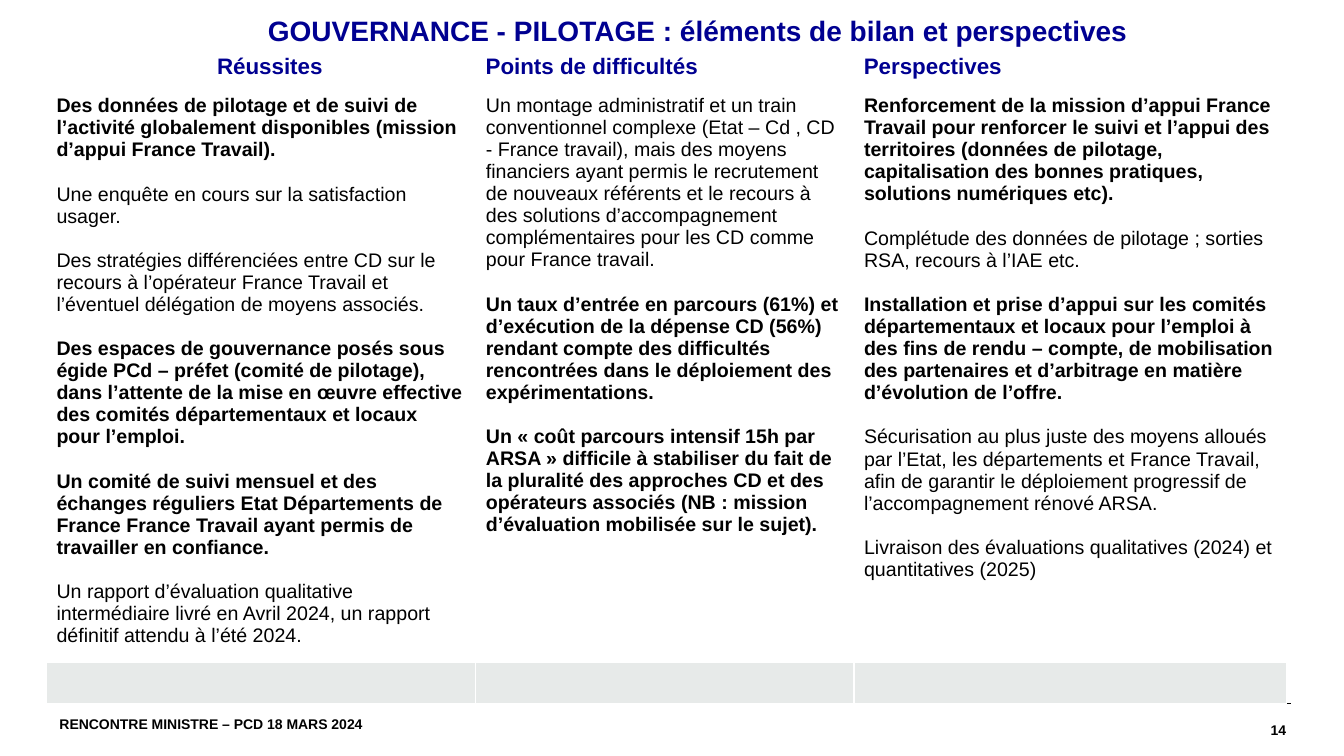
from dataclasses import dataclass

from lxml import etree
from pptx import Presentation
from pptx.dml.color import RGBColor
from pptx.enum.shapes import MSO_CONNECTOR
from pptx.enum.text import MSO_ANCHOR, PP_ALIGN
from pptx.oxml.ns import qn
from pptx.util import Cm, Pt

LEFT, RIGHT = PP_ALIGN.LEFT, PP_ALIGN.RIGHT
TOP, MIDDLE = MSO_ANCHOR.TOP, MSO_ANCHOR.MIDDLE
STRAIGHT = MSO_CONNECTOR.STRAIGHT


@dataclass(frozen=True)
class Theme:
    font: str = "Arial"
    blue: str = "000091"
    black: str = "000000"
    white: str = "FFFFFF"
    grey: str = "E7EAE9"
    title: int = 20
    heading: int = 16
    body: int = 14
    footer: int = 10
    paragraph_gap: int = 16


@dataclass(frozen=True)
class Item:
    text: str
    bold: bool = False


@dataclass(frozen=True)
class Column:
    heading: str
    width: float
    heading_margin: float
    items: tuple[Item, ...]


@dataclass(frozen=True)
class Label:
    text: str
    left: float
    top: float
    width: float
    height: float
    size: int
    color: str
    align: PP_ALIGN = LEFT
    anchor: MSO_ANCHOR = TOP
    inset_x: float = 0
    inset_y: float = 0
    line_spacing: float = 1.0


THEME = Theme()
CELL_MARGIN = 0.25
HEADING_TOP = 0.16
TABLE_LEFT, TABLE_TOP = 1.17, 1.22
ROW_HEIGHTS = (1.04, 14.43, 1.04)
RULE_Y, RULE_WIDTH = 17.73, 31.22
RULE_LEFTS = (1.19, 1.32)

COLUMNS = (
    Column("Réussites", 10.82, 4.3, (
        Item("Des données de pilotage et de suivi de l’activité globalement disponibles "
             "(mission d’appui France Travail).", True),
        Item("Une enquête en cours sur la satisfaction usager."),
        Item("Des stratégies différenciées entre CD sur le recours à l’opérateur "
             "France Travail et l’éventuel délégation de moyens associés."),
        Item("Des espaces de gouvernance posés sous égide PCd – préfet (comité de "
             "pilotage), dans l’attente de la mise en œuvre effective des comités "
             "départementaux et locaux pour l’emploi.", True),
        Item("Un comité de suivi mensuel et des échanges réguliers Etat Départements "
             "de France France Travail ayant permis de travailler en confiance.", True),
        Item("Un rapport d’évaluation qualitative intermédiaire livré en Avril 2024, "
             "un rapport définitif attendu à l’été 2024."),
    )),
    Column("Points de difficultés", 9.53, CELL_MARGIN, (
        Item("Un montage administratif et un train conventionnel complexe (Etat – Cd , "
             "CD - France travail), mais des moyens financiers ayant permis le "
             "recrutement de nouveaux référents et le recours à des solutions "
             "d’accompagnement complémentaires pour les CD comme pour France travail."),
        Item("Un taux d’entrée en parcours (61%) et d’exécution de la dépense CD (56%) "
             "rendant compte des difficultés rencontrées dans le déploiement des "
             "expérimentations.", True),
        Item("Un « coût parcours intensif 15h par ARSA » difficile à stabiliser du fait "
             "de la pluralité des approches CD et des opérateurs associés (NB : mission "
             "d’évaluation mobilisée sur le sujet).", True),
    )),
    Column("Perspectives", 10.9, CELL_MARGIN, (
        Item("Renforcement de la mission d’appui France Travail pour renforcer le suivi "
             "et l’appui des territoires (données de pilotage, capitalisation des bonnes "
             "pratiques, solutions numériques etc).", True),
        Item("Complétude des données de pilotage ; sorties RSA, recours à l’IAE etc."),
        Item("Installation et prise d’appui sur les comités départementaux et locaux "
             "pour l’emploi à des fins de rendu – compte, de mobilisation des partenaires "
             "et d’arbitrage en matière d’évolution de l’offre.", True),
        Item("Sécurisation au plus juste des moyens alloués par l’Etat, les départements "
             "et France Travail, afin de garantir le déploiement progressif de "
             "l’accompagnement rénové ARSA."),
        Item("Livraison des évaluations qualitatives (2024) et quantitatives (2025)"),
    )),
)

LABELS = (
    Label("14", 27.41, 17.73, 5.0, 1.32, THEME.footer, THEME.black, RIGHT, MIDDLE),
    Label("RENCONTRE MINISTRE – PCD 18 MARS 2024", 1.17, 17.73, 8.76, 1.02,
          THEME.footer, THEME.black, LEFT, MIDDLE, 0.33, 0.18),
    Label("GOUVERNANCE - PILOTAGE : éléments de bilan et perspectives", 6.5, 0.3,
          27.37, 2.21, THEME.title, THEME.blue, LEFT, TOP, 0.25, 0.13, 0.9),
)


def style(p, size: int, color: str, bold: bool) -> None:
    for r in p.runs:
        r.font.name = THEME.font
        r.font.size = Pt(size)
        r.font.bold = bold
        r.font.color.rgb = RGBColor.from_string(color)


def add_label(s, label: Label) -> None:
    box = s.shapes.add_textbox(Cm(label.left), Cm(label.top),
                               Cm(label.width), Cm(label.height))
    tf = box.text_frame
    tf.word_wrap = True
    tf.vertical_anchor = label.anchor
    tf.margin_left = tf.margin_right = Cm(label.inset_x)
    tf.margin_top = tf.margin_bottom = Cm(label.inset_y)
    tf.text = label.text
    p = tf.paragraphs[0]
    p.alignment = label.align
    p.line_spacing = label.line_spacing
    style(p, label.size, label.color, True)


def add_rule(s, left: float) -> None:
    rule = s.shapes.add_connector(STRAIGHT, Cm(left), Cm(RULE_Y),
                                  Cm(left + RULE_WIDTH), Cm(RULE_Y))
    rule.line.color.rgb = RGBColor.from_string(THEME.black)
    rule.line.width = Pt(0.8)
    etree.SubElement(rule._element.spPr, qn("a:effectLst"))


def set_borders(cell, top: int, bottom: int) -> None:
    tc_pr = cell._tc.get_or_add_tcPr()
    for side, width in (("L", 1), ("R", 1), ("T", top), ("B", bottom)):
        ln = etree.SubElement(tc_pr, qn(f"a:ln{side}"), w=str(Pt(width)))
        fill = etree.SubElement(ln, qn("a:solidFill"))
        etree.SubElement(fill, qn("a:srgbClr"), val=THEME.white)


def add_items(tf, items: tuple[Item, ...]) -> None:
    for i, item in enumerate(items):
        p = tf.paragraphs[0] if i == 0 else tf.add_paragraph()
        p.text = item.text
        if i:
            p.space_before = Pt(THEME.paragraph_gap)
        style(p, THEME.body, THEME.black, item.bold)


def add_review_table(s) -> None:
    width = sum(column.width for column in COLUMNS)
    table = s.shapes.add_table(len(ROW_HEIGHTS), len(COLUMNS), Cm(TABLE_LEFT),
                               Cm(TABLE_TOP), Cm(width), Cm(sum(ROW_HEIGHTS))).table
    table.horz_banding = False
    for row, height in zip(table.rows, ROW_HEIGHTS):
        row.height = Cm(height)

    for c, column in enumerate(COLUMNS):
        table.columns[c].width = Cm(column.width)
        heading, body, band = (table.cell(r, c) for r in range(len(ROW_HEIGHTS)))
        set_borders(heading, 1, 3)
        set_borders(body, 3, 1)
        set_borders(band, 1, 1)
        heading.fill.background()
        body.fill.background()
        band.fill.solid()
        band.fill.fore_color.rgb = RGBColor.from_string(THEME.grey)

        heading.margin_left = Cm(column.heading_margin)
        heading.margin_top = Cm(HEADING_TOP)
        heading.text_frame.text = column.heading
        style(heading.text_frame.paragraphs[0], THEME.heading, THEME.blue, True)
        add_items(body.text_frame, column.items)


def main() -> None:
    prs = Presentation()
    prs.slide_width, prs.slide_height = Cm(33.87), Cm(19.05)
    s = prs.slides.add_slide(prs.slide_layouts[6])

    # Footer rules, partly covered by the grey band
    for left in RULE_LEFTS:
        add_rule(s, left)

    # Three-column review
    add_review_table(s)

    # Page number, event name and title
    for label in LABELS:
        add_label(s, label)
    prs.save("out.pptx")


if __name__ == "__main__":
    main()
